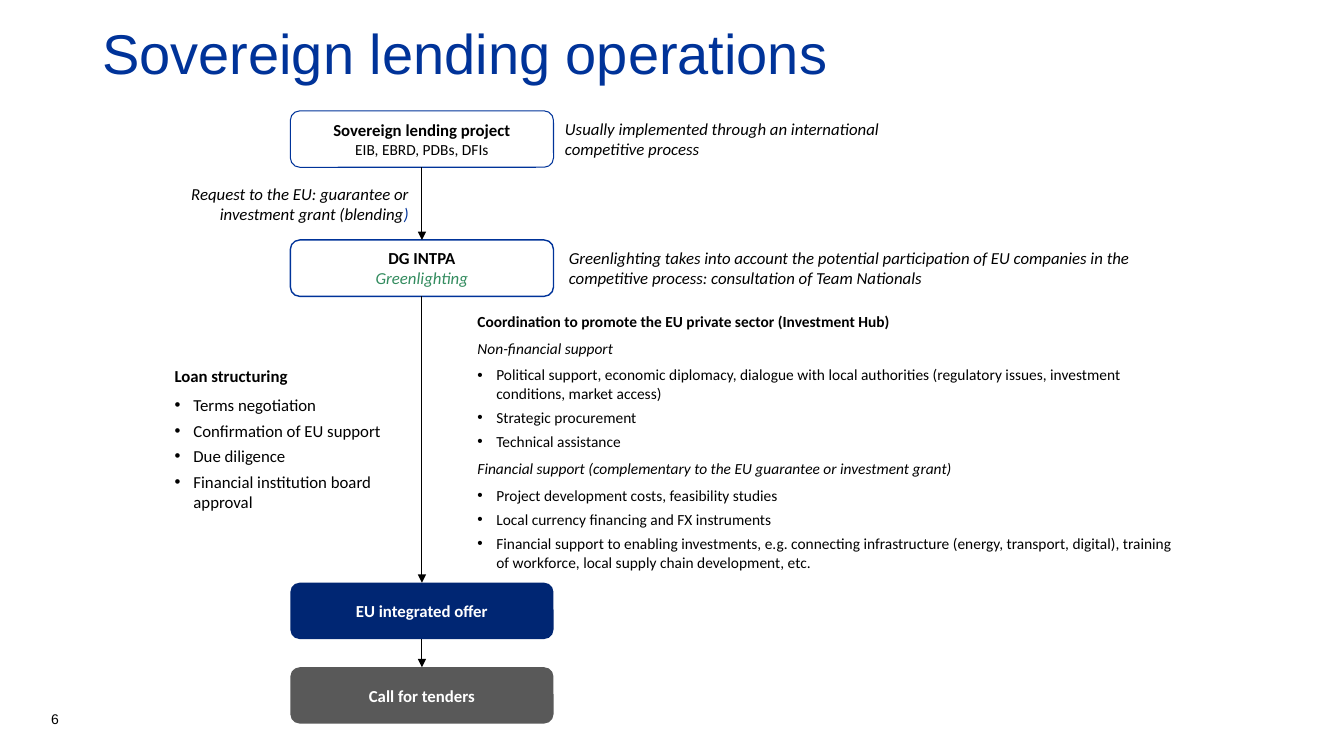
from collections import namedtuple
from lxml.etree import SubElement
from pptx import Presentation
from pptx.dml.color import RGBColor
from pptx.enum.shapes import MSO_CONNECTOR, MSO_SHAPE
from pptx.enum.text import MSO_ANCHOR, PP_ALIGN
from pptx.oxml.ns import qn
from pptx.util import Pt

BLUE = RGBColor(0x00, 0x33, 0x99)
NAVY = RGBColor(0x00, 0x26, 0x73)
GREEN = RGBColor(0x33, 0x8C, 0x5F)
GREY = RGBColor(0x59, 0x59, 0x59)
BLACK = RGBColor(0x00, 0x00, 0x00)
WHITE = RGBColor(0xFF, 0xFF, 0xFF)

Box = namedtuple("Box", "left top width height")


def add_run(paragraph, text, size, color=BLACK, bold=False, italic=False, name="Calibri"):
    run = paragraph.add_run()
    run.text = text
    run.font.name = name
    run.font.size = Pt(size)
    run.font.bold = bold
    run.font.italic = italic
    run.font.color.rgb = color


def add_paragraph(frame, space_after=0, alignment=PP_ALIGN.LEFT):
    paragraph = frame.paragraphs[0]
    if paragraph.runs:
        paragraph = frame.add_paragraph()
    paragraph.alignment = alignment
    paragraph.space_after = Pt(space_after)
    return paragraph


def add_bullet(frame, text, size, space_after=4):
    paragraph = add_paragraph(frame, space_after)
    properties = paragraph._p.get_or_add_pPr()
    indent = Pt(13.5)
    properties.set("marL", str(indent))
    properties.set("indent", str(-indent))
    bullet_color = SubElement(properties, qn("a:buClr"))
    SubElement(bullet_color, qn("a:srgbClr"), val=str(BLACK))
    SubElement(properties, qn("a:buFont"), typeface="Arial")
    SubElement(properties, qn("a:buChar"), char="•")
    add_run(paragraph, text, size)


def add_panel(slide, box, fill=None, line=None, line_width=0.75):
    shape = slide.shapes.add_shape(MSO_SHAPE.ROUNDED_RECTANGLE, *map(Pt, box))
    shape.shadow.inherit = False
    if fill is None:
        shape.fill.background()
    else:
        shape.fill.solid()
        shape.fill.fore_color.rgb = fill
    if line is None:
        shape.line.fill.background()
    else:
        shape.line.color.rgb = line
        shape.line.width = Pt(line_width)
    frame = shape.text_frame
    frame.word_wrap = True
    frame.vertical_anchor = MSO_ANCHOR.MIDDLE
    return frame


def add_label(slide, box, anchor, text, size, color):
    frame = slide.shapes.add_textbox(*map(Pt, box)).text_frame
    frame.word_wrap = True
    frame.vertical_anchor = anchor
    paragraph = add_paragraph(frame)
    add_run(paragraph, text, size, color, name="Arial")
    return paragraph


def add_arrow(slide, x, top, bottom):
    arrow = slide.shapes.add_connector(MSO_CONNECTOR.STRAIGHT, Pt(x), Pt(top), Pt(x), Pt(bottom))
    arrow.line.color.rgb = BLACK
    arrow.line.width = Pt(0.75)
    SubElement(arrow.line._get_or_add_ln(), qn("a:tailEnd"), type="triangle")
    SubElement(arrow._element.spPr, qn("a:effectLst"))


def add_flow(slide, box):
    node_height = 40.3
    tops = [box.top + offset for offset in (0, 92.2, 337, box.height - node_height)]
    styles = [(WHITE, BLUE, 0.75), (WHITE, BLUE, 1), (NAVY,), (GREY,)]
    frames = [
        add_panel(slide, Box(box.left, top, box.width, node_height), *style)
        for top, style in zip(tops, styles)
    ]
    titles = ["Sovereign lending project", "DG INTPA", "EU integrated offer", "Call for tenders"]
    colors = [BLACK, BLACK, WHITE, WHITE]
    for frame, title, color in zip(frames, titles, colors):
        add_run(add_paragraph(frame, alignment=PP_ALIGN.CENTER), title, 12, color, bold=True)
    add_run(add_paragraph(frames[0], alignment=PP_ALIGN.CENTER), "EIB, EBRD, PDBs, DFIs", 11)
    greenlighting = frames[1].paragraphs[0]
    greenlighting.add_line_break()
    add_run(greenlighting, "Greenlighting", 12, GREEN, italic=True)
    for start, end in zip(tops, tops[1:]):
        add_arrow(slide, box.left + box.width / 2, start + node_height, end)


def add_note(slide, box, text, alignment=PP_ALIGN.LEFT):
    paragraph = add_paragraph(add_panel(slide, box), alignment=alignment)
    add_run(paragraph, text, 12, italic=True)
    return paragraph


def add_loan_structuring(slide, box):
    frame = add_panel(slide, box, WHITE)
    add_run(add_paragraph(frame, 6), "Loan structuring", 12, bold=True)
    for text in (
        "Terms negotiation",
        "Confirmation of EU support",
        "Due diligence",
        "Financial institution board approval",
    ):
        add_bullet(frame, text, 12)


def add_coordination(slide, box):
    frame = add_panel(slide, box)
    heading = "Coordination to promote the EU private sector (Investment Hub)"
    add_run(add_paragraph(frame, 6), heading, 11, bold=True)
    sections = {
        "Non-financial support": [
            ("Political support, economic diplomacy, dialogue with local authorities "
             "(regulatory issues, investment conditions, market access)", 4),
            ("Strategic procurement", 4),
            ("Technical assistance", 6),
        ],
        "Financial support (complementary to the EU guarantee or investment grant)": [
            ("Project development costs, feasibility studies", 4),
            ("Local currency financing and FX instruments", 4),
            ("Financial support to enabling investments, e.g. connecting infrastructure "
             "(energy, transport, digital), training of workforce, local supply chain "
             "development, etc.", 4),
        ],
    }
    for section, bullets in sections.items():
        add_run(add_paragraph(frame, 6), section, 11, italic=True)
        for text, space_after in bullets:
            add_bullet(frame, text, 11, space_after)


def main():
    presentation = Presentation()
    presentation.slide_width = Pt(960)
    presentation.slide_height = Pt(540)
    slide = presentation.slides.add_slide(presentation.slide_layouts[6])

    title = add_label(slide, Box(66, 8, 828, 64), MSO_ANCHOR.MIDDLE,
                      "Sovereign lending operations", 40, BLUE)
    title.line_spacing = 0.9
    add_label(slide, Box(29.5, 494.6, 216, 28.8), MSO_ANCHOR.BOTTOM, "6", 10, BLACK)

    add_loan_structuring(slide, Box(112.3, 259.2, 189.4, 108.7))
    add_coordination(slide, Box(324, 213.1, 542.2, 204.5))
    add_flow(slide, Box(207.4, 79.2, 188, 437.7))
    add_note(slide, Box(394.6, 79.9, 258.5, 38.9),
             "Usually implemented through an international competitive process")
    add_note(slide, Box(397.4, 172.1, 437, 38.9),
             "Greenlighting takes into account the potential participation of EU companies "
             "in the competitive process: consultation of Team Nationals")
    request = add_note(slide, Box(111.6, 126, 189.4, 38.9),
                       "Request to the EU: guarantee or investment grant (blending",
                       PP_ALIGN.RIGHT)
    add_run(request, ")", 12, BLUE, italic=True)
    presentation.save("out.pptx")


if __name__ == "__main__":
    main()
